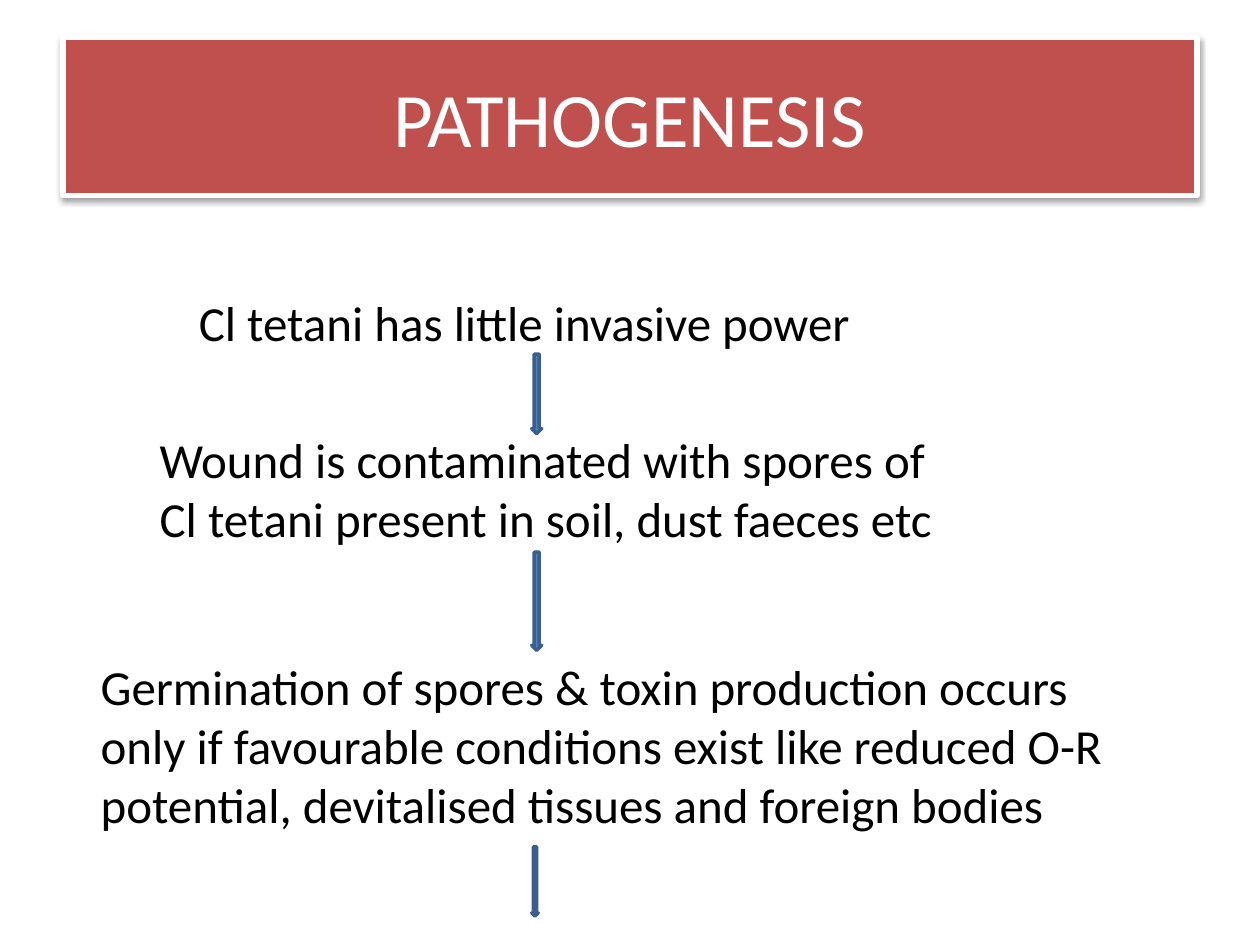
from pptx import Presentation, util as u
from pptx.dml.color import RGBColor
from pptx.enum import shapes, text
from pptx.oxml import parse_xml
from pptx.oxml.ns import nsdecls, qn

Cm = u.Cm
RED = RGBColor(0xC0, 0x50, 0x4D)
BLUE = RGBColor(0x4F, 0x81, 0xBD)
NAVY = RGBColor(0x3A, 0x5F, 0x8C)
WHITE = RGBColor(0xFF, 0xFF, 0xFF)
BLACK = RGBColor(0, 0, 0)
FONT = "Calibri"

# Each step: wording, its box, and the box of the arrow below it, in cm;
# the arrow's left and top are measured from the step's box
STEPS = [
    ("Cl tetani has little invasive power",
     (3.76, 5.77, 15.09, 1.45), (6.96, 1.37, 0.2, 1.6)),
    ("Wound is contaminated with spores of Cl tetani present in soil, "
     "dust faeces etc",
     (2.97, 8.53, 16.28, 2.64), (7.75, 2.6, 0.2, 1.98)),
    ("Germination of spores & toxin production occurs only if favourable "
     "conditions exist like reduced O-R potential, devitalised tissues "
     "and foreign bodies",
     (1.78, 13.11, 21.82, 3.84), (8.94, 3.96, 0.13, 1.4)),
]


def style(run, size, color):
    run.font.name = FONT
    run.font.size = u.Pt(size)
    run.font.color.rgb = color


def add_block(slide, kind, box, fill, line, width):
    block = slide.shapes.add_shape(kind, *map(Cm, box))
    block.shadow.inherit = False
    block.fill.solid()
    block.fill.fore_color.rgb = fill
    block.line.color.rgb = line
    block.line.width = u.Pt(width)
    return block


def add_shadow(shape):
    effects = shape._element.spPr.find(qn("a:effectLst"))
    effects.append(parse_xml(
        f'<a:outerShdw {nsdecls("a")} blurRad="40000" dist="20000" '
        'dir="5400000" rotWithShape="0"><a:srgbClr val="000000">'
        '<a:alpha val="38000"/></a:srgbClr></a:outerShdw>'))


def add_title(slide, box, words):
    banner = add_block(slide, shapes.MSO_SHAPE.RECTANGLE, box, RED, WHITE, 3)
    add_shadow(banner)
    frame = banner.text_frame
    frame.text = words
    frame.vertical_anchor = text.MSO_ANCHOR.MIDDLE
    para = frame.paragraphs[0]
    para.alignment = text.PP_ALIGN.CENTER
    style(para.runs[0], 44, WHITE)


def add_step(slide, box, words, arrow):
    left, top = box[:2]
    # Wording
    frame = slide.shapes.add_textbox(*map(Cm, box)).text_frame
    frame.word_wrap = True
    frame.auto_size = text.MSO_AUTO_SIZE.SHAPE_TO_FIT_TEXT
    frame.text = words
    style(frame.paragraphs[0].runs[0], 28, BLACK)
    # Arrow to the next step
    dx, dy, width, height = arrow
    add_block(slide, shapes.MSO_SHAPE.DOWN_ARROW,
              (left + dx, top + dy, width, height), BLUE, NAVY, 2)


def main():
    deck = Presentation()
    deck.slide_width, deck.slide_height = Cm(25.4), Cm(19.05)
    slide = deck.slides.add_slide(deck.slide_layouts[6])
    add_title(slide, (1.27, 0.76, 22.86, 3.18), "PATHOGENESIS")
    for words, box, arrow in STEPS:
        add_step(slide, box, words, arrow)
    deck.save("out.pptx")


if __name__ == "__main__":
    main()
